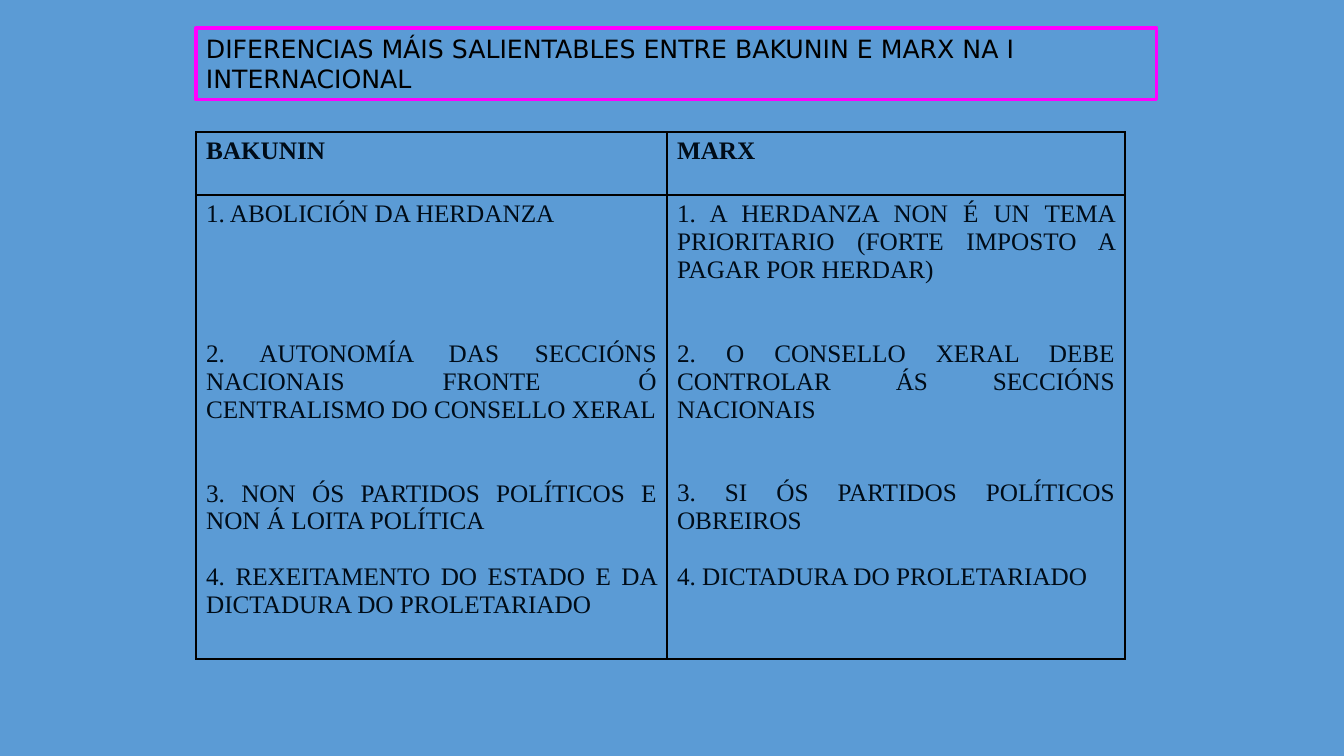
import pptx
import pptx.dml.color
import pptx.enum.shapes
import pptx.enum.text
import pptx.oxml.ns
import pptx.util
from lxml import etree

COLORS = {"blue": "5B9BD5", "navy": "000C18", "black": "000000", "magenta": "FF00FF"}
SCALE = 12192000 / 1344  # EMU per px
LINE_PT = 20  # height of one line of table text

HEADINGS = ["BAKUNIN", "MARX"]
# Each point: (lines of space above, text); the first point is auto-numbered.
POINTS = [
    [
        (0, " ABOLICIÓN DA HERDANZA"),
        (4, "2. AUTONOMÍA DAS SECCIÓNS NACIONAIS FRONTE Ó CENTRALISMO DO CONSELLO XERAL"),
        (2, "3. NON ÓS PARTIDOS POLÍTICOS E NON Á LOITA POLÍTICA"),
        (1, "4. REXEITAMENTO DO ESTADO E DA DICTADURA DO PROLETARIADO"),
    ],
    [
        (0, " A HERDANZA NON É UN TEMA PRIORITARIO (FORTE IMPOSTO A PAGAR POR HERDAR)"),
        (2, "2. O CONSELLO XERAL DEBE CONTROLAR ÁS SECCIÓNS NACIONAIS"),
        (2, "3. SI ÓS PARTIDOS POLÍTICOS OBREIROS"),
        (1, "4. DICTADURA DO PROLETARIADO"),
    ],
]


def px(n):
    return pptx.util.Emu(round(n * SCALE))


def rgb(name):
    return pptx.dml.color.RGBColor.from_string(COLORS[name])


def sub(parent, tag, **attrs):
    return etree.SubElement(parent, pptx.oxml.ns.qn(tag), attrs)


class SlideBuilder:
    title_font = "DejaVu Sans"
    table_font = "Times New Roman"
    size = pptx.util.Pt(18)

    def __init__(self, prs):
        self.slide = prs.slides.add_slide(prs.slide_layouts[6])
        fill = self.slide.background.fill
        fill.solid()
        fill.fore_color.rgb = rgb("blue")

    def style(self, p, font, color, align, bold=False):
        p.alignment = align
        p.font.name = font
        p.font.size = self.size
        p.font.bold = bold
        p.font.color.rgb = rgb(color)

    def title(self, text, x, y, w, h):
        sp = self.slide.shapes.add_shape(
            pptx.enum.shapes.MSO_SHAPE.RECTANGLE, px(x), px(y), px(w), px(h))
        sp.shadow.inherit = False
        sp.fill.background()
        sp.line.color.rgb = rgb("magenta")
        sp.line.width = pptx.util.Pt(2.25)
        tf = sp.text_frame
        tf.word_wrap = True
        tf.auto_size = pptx.enum.text.MSO_AUTO_SIZE.SHAPE_TO_FIT_TEXT
        tf.vertical_anchor = pptx.enum.text.MSO_ANCHOR.TOP
        p = tf.paragraphs[0]
        p.text = text
        self.style(p, self.title_font, "black", pptx.enum.text.PP_ALIGN.LEFT)

    def table(self, x, y, widths, heights):
        table = self.slide.shapes.add_table(
            len(heights), len(widths), px(x), px(y), px(sum(widths)), px(sum(heights))).table
        table.first_row = table.horz_banding = False
        for column, w in zip(table.columns, widths):
            column.width = px(w)
        for row, h in zip(table.rows, heights):
            row.height = px(h)
        return table

    def cell(self, cell, points, bold=False, numbered=False):
        self.borders(cell)
        cell.fill.solid()
        cell.fill.fore_color.rgb = rgb("blue")
        tf = cell.text_frame
        for i, (gap, text) in enumerate(points):
            p = tf.add_paragraph() if i else tf.paragraphs[0]
            p.text = text
            if numbered and i == 0:
                self.number(p)
            if gap:
                p.space_before = pptx.util.Pt(gap * LINE_PT)
            self.style(p, self.table_font, "navy", pptx.enum.text.PP_ALIGN.JUSTIFY, bold)

    def borders(self, cell):
        tc_pr = cell._tc.get_or_add_tcPr()
        for side in ("a:lnL", "a:lnR", "a:lnT", "a:lnB"):
            ln = sub(tc_pr, side, w=str(pptx.util.Pt(1)))
            sub(sub(ln, "a:solidFill"), "a:srgbClr", val=COLORS["black"])

    def number(self, p):
        p_pr = p._p.get_or_add_pPr()
        p_pr.set("marL", "0")
        p_pr.set("indent", "0")
        sub(p_pr, "a:buFontTx")
        sub(p_pr, "a:buAutoNum", type="arabicPeriod")


def main():
    prs = pptx.Presentation()
    prs.slide_width, prs.slide_height = px(1344), px(756)
    s = SlideBuilder(prs)
    table = s.table(196, 132, widths=[471, 458], heights=[63, 464])
    for col, (heading, points) in enumerate(zip(HEADINGS, POINTS)):
        s.cell(table.cell(0, col), [(0, heading)], bold=True)
        s.cell(table.cell(1, col), points, numbered=True)
    s.title("DIFERENCIAS MÁIS SALIENTABLES ENTRE BAKUNIN E MARX NA I INTERNACIONAL",
            196, 28, 961, 72)
    prs.save("out.pptx")


if __name__ == "__main__":
    main()
